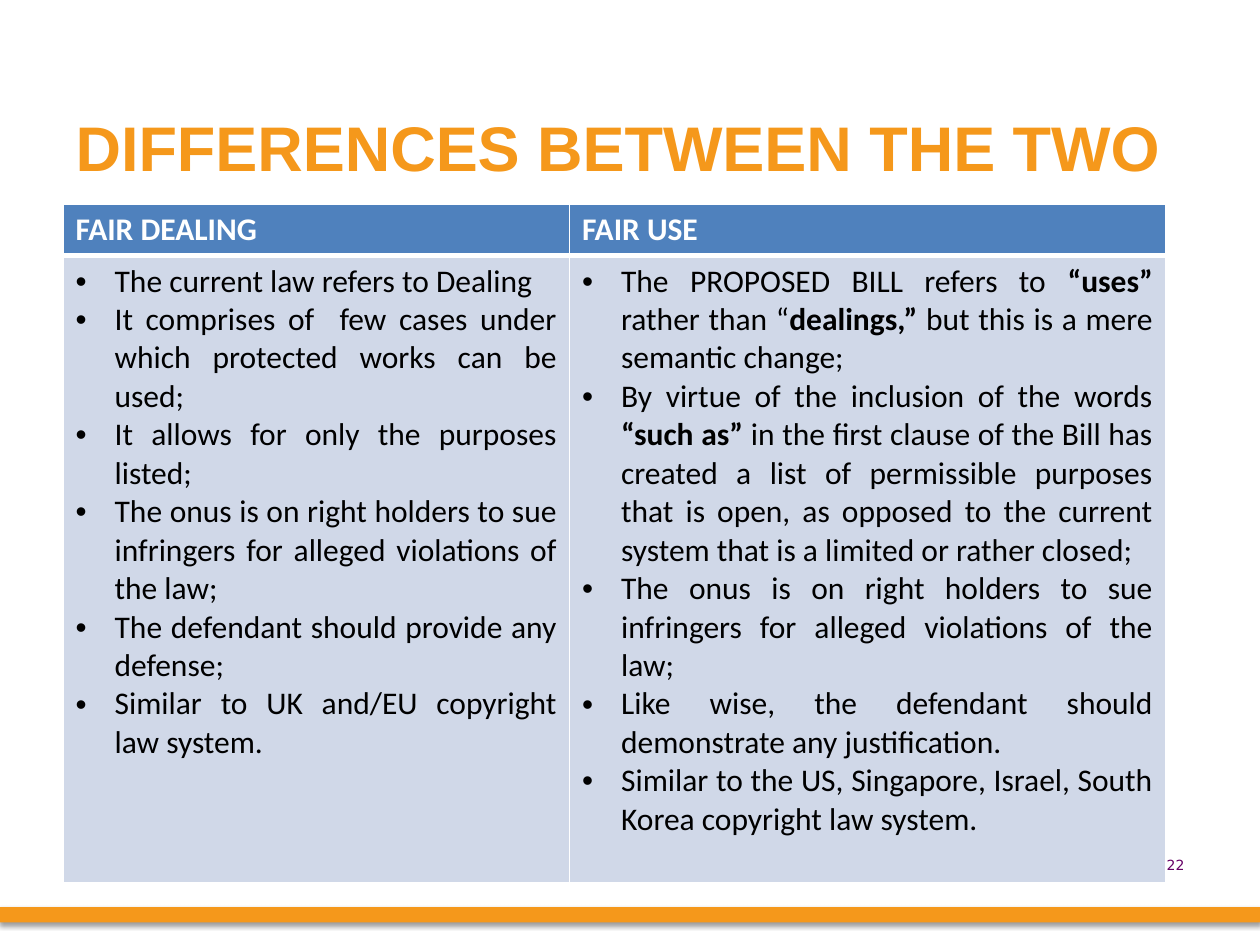
from dataclasses import dataclass

from lxml.etree import SubElement
from pptx import Presentation
from pptx.dml.color import RGBColor as RGB
from pptx.enum.shapes import MSO_SHAPE as Shape
from pptx.enum.text import MSO_ANCHOR as Anchor, PP_ALIGN as Align
from pptx.oxml import parse_xml
from pptx.oxml.ns import nsdecls, qn
from pptx.util import Inches, Pt


@dataclass(frozen=True)
class Theme:
    orange: str = "F5981B"
    blue: str = "4F81BD"
    pale: str = "D0D8E8"
    white: str = "FFFFFF"
    black: str = "000000"
    purple: str = "660066"
    heading_font: str = "Arial"
    body_font: str = "Calibri"
    number_font: str = "DejaVu Sans"
    title_size: int = 36
    body_size: int = 18
    number_size: int = 8


THEME = Theme()

# Text between asterisks is bold.
COLUMNS = {
    "FAIR DEALING": [
        "The current law refers to Dealing",
        "It comprises of  few cases under which protected works can be used;",
        "It allows for only the purposes listed;",
        "The onus is on right holders to sue infringers for alleged violations of the law;",
        "The defendant should provide any defense;",
        "Similar to UK and/EU copyright law system.",
    ],
    "FAIR USE": [
        "The PROPOSED BILL refers to *“uses”* rather than “*dealings,”* "
        "but this is a mere semantic change;",
        "By virtue of the inclusion of the words *“such as”* in the first clause of the Bill "
        "has created a list of permissible purposes that is open, as opposed to the current "
        "system that is a limited or rather closed;",
        "The onus is on right holders to sue infringers for alleged violations of the law;",
        "Like wise, the defendant should demonstrate any justification.",
        "Similar to the US, Singapore, Israel, South Korea copyright law system.",
    ],
}


def style(span, font, size, color, bold=False):
    span.font.name = font
    span.font.size = Pt(size)
    span.font.bold = bold
    span.font.color.rgb = RGB.from_string(color)


def place(box, left, top, width, height):
    box.left, box.top = Inches(left), Inches(top)
    box.width, box.height = Inches(width), Inches(height)


def add_footer_band(page, left, top, width, height):
    band = page.shapes.add_shape(
        Shape.RECTANGLE, Inches(left), Inches(top), Inches(width), Inches(height))
    band.fill.solid()
    band.fill.fore_color.rgb = RGB.from_string(THEME.orange)
    band.line.fill.background()
    band._element.spPr.append(parse_xml(
        f'<a:effectLst {nsdecls("a")}>'
        f'<a:outerShdw blurRad="{Pt(3.1)}" dist="{Pt(1.6)}" dir="5400000" rotWithShape="0">'
        f'<a:srgbClr val="{THEME.black}"><a:alpha val="38000"/></a:srgbClr>'
        '</a:outerShdw></a:effectLst>'))


def fill_title(page, text, left, top, width, height):
    title = page.shapes.title
    place(title, left, top, width, height)
    frame = title.text_frame
    frame.text = text
    frame.vertical_anchor = Anchor.MIDDLE
    para = frame.paragraphs[0]
    para.alignment = Align.LEFT
    style(para.runs[0], THEME.heading_font, THEME.title_size, THEME.orange, True)


def paint_cell(cell, color, top_width, bottom_width):
    """Fill the cell and give it white borders, widths in points."""
    cell.fill.solid()
    cell.fill.fore_color.rgb = RGB.from_string(color)
    properties = cell._tc.get_or_add_tcPr()
    widths = {"lnL": 1, "lnR": 1, "lnT": top_width, "lnB": bottom_width}
    for index, (side, width) in enumerate(widths.items()):
        properties.insert(index, parse_xml(
            f'<a:{side} {nsdecls("a")} w="{Pt(width)}"><a:solidFill>'
            f'<a:srgbClr val="{THEME.white}"/></a:solidFill></a:{side}>'))


def add_bullet(para, text):
    para.alignment = Align.JUSTIFY
    properties = para._p.get_or_add_pPr()
    properties.set("marL", str(Inches(0.31)))
    properties.set("indent", str(-Inches(0.31)))
    SubElement(properties, qn("a:buFont"), typeface=THEME.heading_font)
    SubElement(properties, qn("a:buChar"), char="•")
    for index, part in enumerate(text.split("*")):
        if part:
            span = para.add_run()
            span.text = part
            style(span, THEME.body_font, THEME.body_size, THEME.black, index % 2 == 1)


def add_comparison(page, columns, left, top, column_widths, row_heights):
    table = page.shapes.add_table(
        2, len(columns), Inches(left), Inches(top),
        Inches(sum(column_widths)), Inches(sum(row_heights))).table
    for row, height in zip(table.rows, row_heights):
        row.height = Inches(height)
    for index, (heading, points) in enumerate(columns.items()):
        table.columns[index].width = Inches(column_widths[index])
        head, body = table.cell(0, index), table.cell(1, index)
        paint_cell(head, THEME.blue, 1, 3)
        head.text_frame.text = heading
        style(head.text_frame.paragraphs[0].runs[0],
              THEME.body_font, THEME.body_size, THEME.white, True)
        paint_cell(body, THEME.pale, 3, 1)
        frame = body.text_frame
        for number, point in enumerate(points):
            add_bullet(frame.add_paragraph() if number else frame.paragraphs[0], point)


def add_page_number(page, number, left, top, width, height):
    box = page.shapes.add_textbox(
        Inches(left), Inches(top), Inches(width), Inches(height))
    frame = box.text_frame
    frame.word_wrap = True
    frame.text = str(number)
    para = frame.paragraphs[0]
    para.alignment = Align.RIGHT
    style(para.runs[0], THEME.number_font, THEME.number_size, THEME.purple)


def main():
    deck = Presentation()
    deck.slide_width, deck.slide_height = Inches(10), Inches(7.5)
    page = deck.slides.add_slide(deck.slide_layouts.get_by_name("Title Only"))
    add_footer_band(page, 0, 7.2, 10, 0.12)
    fill_title(page, "DIFFERENCES BETWEEN THE TWO", 0.5, 0.77, 9, 0.78)
    add_comparison(page, COLUMNS, 0.5, 1.62, (4.02, 4.73), (0.41, 4.98))
    add_page_number(page, 22, 8.86, 6.75, 0.64, 0.4)
    deck.save("out.pptx")


if __name__ == "__main__":
    main()
